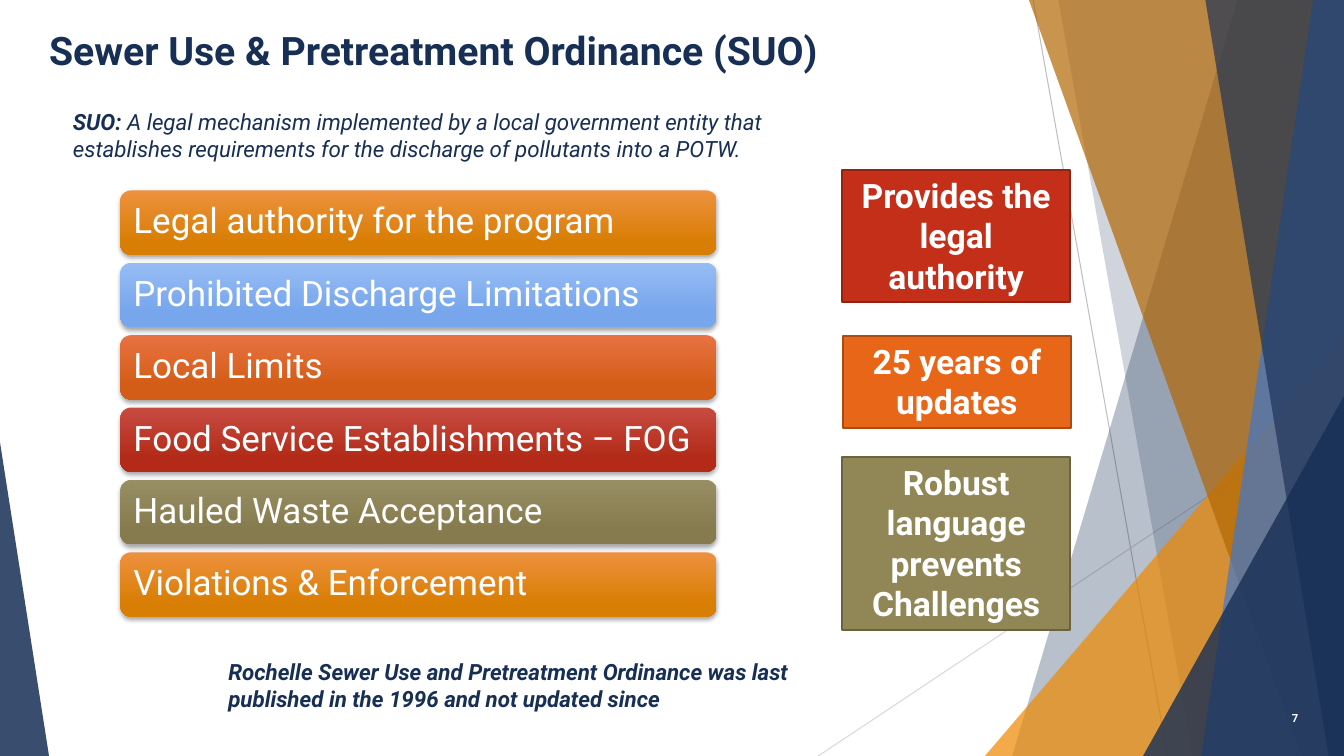
import pptx
import pptx.util
import pptx.dml.color
import pptx.enum.shapes
import pptx.enum.text
import pptx.oxml.ns
import lxml.etree

Pt = pptx.util.Pt
MSO_SHAPE = pptx.enum.shapes.MSO_SHAPE
ALIGN = pptx.enum.text.PP_ALIGN
ANCHOR = pptx.enum.text.MSO_ANCHOR
RGB = pptx.dml.color.RGBColor.from_string
qn = pptx.oxml.ns.qn

COLORS = {
    "navy": "172F55", "amber": "ED8A05", "brown": "B26704", "blue": "4177CC",
    "white": "FFFFFF", "black": "000000", "gray": "BFBFBF", "light gray": "D9D9D9",
    "red": "C42F1A", "red edge": "912313", "orange": "E76618", "orange edge": "AB4B12",
    "olive": "918655", "olive edge": "6B633F",
    "amber top": "EE913F", "amber bottom": "D97E05",
    "blue top": "96BCF5", "blue bottom": "77A6EC",
    "orange top": "E87242", "orange bottom": "D35D16",
    "red top": "C74B42", "red bottom": "B32B18",
    "olive top": "988E64", "olive bottom": "857B4E",
}
W, H = 960, 540

prs = pptx.Presentation()
prs.slide_width, prs.slide_height = Pt(W), Pt(H)
s = prs.slides.add_slide(prs.slide_layouts[6])


def set_fill(sp, color, opacity=100):
    sp.shadow.inherit = False
    sp.fill.solid()
    sp.fill.fore_color.rgb = RGB(COLORS[color])
    sp.line.fill.background()
    if opacity < 100:
        clr = sp.fill._xPr.find(qn("a:solidFill"))[0]
        lxml.etree.SubElement(clr, qn("a:alpha"), val=str(opacity * 1000))


def write(sp, text, size, color, align=ALIGN.LEFT, anchor=ANCHOR.TOP, bold=False, italic=False):
    tf = sp.text_frame
    tf.word_wrap = True
    tf.vertical_anchor = anchor
    tf.text = text
    p = tf.paragraphs[0]
    p.alignment = align
    for r in p.runs:
        r.font.name, r.font.size = "Roboto", Pt(size)
        r.font.bold, r.font.italic = bold, italic
        r.font.color.rgb = RGB(COLORS[color])
    return p


# Background: thin lines
for x1, y1, x2, y2, color in [(738, 0, 834, H, "gray"), (W, 290, 584.5, H, "light gray")]:
    line = s.shapes.add_connector(pptx.enum.shapes.MSO_CONNECTOR.STRAIGHT,
                                  Pt(x1), Pt(y1), Pt(x2), Pt(y2))
    line.line.color.rgb = RGB(COLORS[color])
    line.line.width = Pt(0.75)
    lxml.etree.SubElement(line._element.spPr, qn("a:effectLst"))

# Background: bands (top x, bottom x) and triangles (left, top) reaching the right edge
for kind, a, b, color, opacity in [
    ("band", 884, 723, "navy", 30),
    ("band", 756, 852, "navy", 20),
    ("triangle", 703.5, 240, "amber", 72),
    ("band", 735, 929.5, "brown", 70),
    ("band", 938, 858, "blue", 70),
    ("band", 861, 949, "navy", 65),
    ("triangle", 816.5, 283, "navy", 80),
]:
    if kind == "band":
        fb = s.shapes.build_freeform(Pt(a), 0)
        fb.add_line_segments([(Pt(W), 0), (Pt(W), Pt(H)), (Pt(b), Pt(H))], close=True)
        sp = fb.convert_to_shape()
    else:
        sp = s.shapes.add_shape(MSO_SHAPE.ISOSCELES_TRIANGLE, Pt(a), Pt(b), Pt(W - a), Pt(H - b))
        sp.adjustments[0] = 1
    set_fill(sp, color, opacity)

# Background: left corner
sp = s.shapes.add_shape(MSO_SHAPE.ISOSCELES_TRIANGLE, 0, Pt(316), Pt(35), Pt(224))
sp.adjustments[0] = 0
set_fill(sp, "navy", 85)

# Title
title = s.shapes.add_textbox(Pt(28), Pt(15), Pt(599), Pt(48))
write(title, "Sewer Use & Pretreatment Ordinance (SUO)", 28, "navy", bold=True)

# Ordinance topics
for i, (topic, hue) in enumerate([
    ("Legal authority for the program", "amber"),
    ("Prohibited Discharge Limitations", "blue"),
    ("Local Limits", "orange"),
    ("Food Service Establishments – FOG", "red"),
    ("Hauled Waste Acceptance", "olive"),
    ("Violations & Enforcement", "amber"),
]):
    sp = s.shapes.add_shape(MSO_SHAPE.ROUNDED_RECTANGLE, Pt(86), Pt(136 + 51.7 * i), Pt(426), Pt(46))
    sp.fill.gradient()
    sp.fill.gradient_angle = 270
    for stop, position, end in zip(sp.fill.gradient_stops, (0, 0.78), ("top", "bottom")):
        stop.position = position
        stop.color.rgb = RGB(COLORS[f"{hue} {end}"])
    sp.line.fill.background()
    sp.shadow.inherit = False
    effects = sp._element.spPr.find(qn("a:effectLst"))
    shadow = lxml.etree.SubElement(effects, qn("a:outerShdw"), blurRad=str(Pt(3)),
                                   dist=str(Pt(2)), dir="5400000", rotWithShape="0")
    clr = lxml.etree.SubElement(shadow, qn("a:srgbClr"), val=COLORS["black"])
    lxml.etree.SubElement(clr, qn("a:alpha"), val="35000")
    p = write(sp, topic, 25, "white", anchor=ANCHOR.MIDDLE)
    p.line_spacing = 0.9
    tf = sp.text_frame
    tf.margin_left = tf.margin_right = tf.margin_top = tf.margin_bottom = Pt(7.2)

# Definition
definition = s.shapes.add_textbox(Pt(45), Pt(73.5), Pt(556), Pt(48))
p = write(definition, "SUO: ", 16, "navy", bold=True, italic=True)
r = p.add_run()
r.text = ("A legal mechanism implemented by a local government entity that "
          "establishes requirements for the discharge of pollutants into a POTW.")
r.font.name, r.font.size, r.font.italic = "Roboto", Pt(16), True
r.font.color.rgb = RGB(COLORS["navy"])

# Closing remark
remark = s.shapes.add_textbox(Pt(156), Pt(466.5), Pt(430), Pt(46))
write(remark, "Rochelle Sewer Use and Pretreatment Ordinance was last "
      "published in the 1996 and not updated since", 16, "navy", bold=True, italic=True)

# Benefit boxes
for text, left, top, height, color in [
    ("Provides the legal authority", 601.5, 121.5, 94.5, "red"),
    ("25 years of updates", 602, 240, 65.5, "orange"),
    ("Robust language prevents Challenges", 601.5, 326.5, 123.5, "olive"),
]:
    sp = s.shapes.add_shape(MSO_SHAPE.RECTANGLE, Pt(left), Pt(top), Pt(163), Pt(height))
    set_fill(sp, color)
    sp.line.color.rgb = RGB(COLORS[f"{color} edge"])
    sp.line.width = Pt(1.5)
    write(sp, text, 24, "white", align=ALIGN.CENTER, bold=True)

# Slide number
number = s.shapes.add_textbox(Pt(880.5), Pt(498.5), Pt(54), Pt(29))
write(number, "7", 8, "white", align=ALIGN.RIGHT, anchor=ANCHOR.MIDDLE, bold=True)

prs.save("out.pptx")
